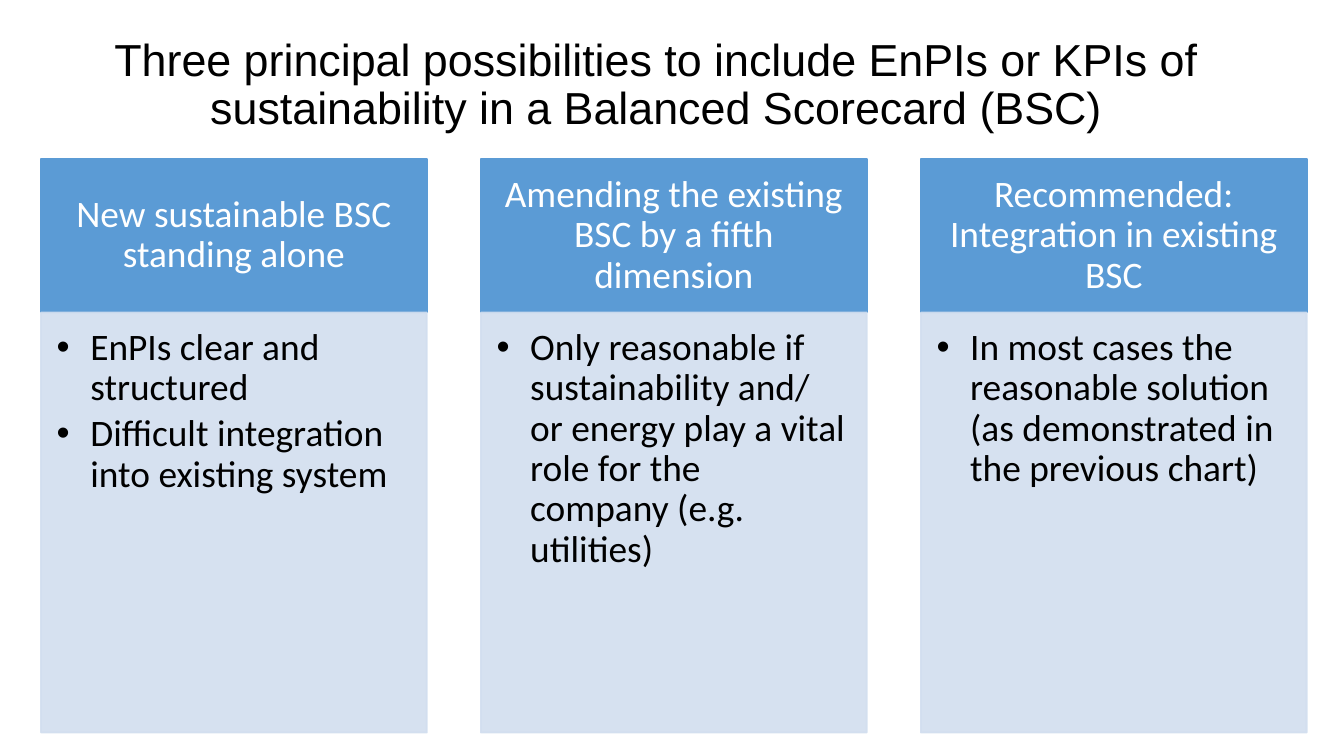
from lxml.etree import SubElement
from pptx import Presentation
from pptx.dml.color import RGBColor
from pptx.enum.shapes import MSO_SHAPE
from pptx.enum.text import MSO_ANCHOR, MSO_AUTO_SIZE, PP_ALIGN
from pptx.oxml.ns import qn
from pptx.util import Pt

BLACK = RGBColor(0x00, 0x00, 0x00)
WHITE = RGBColor(0xFF, 0xFF, 0xFF)
BLUE = RGBColor(0x5B, 0x9B, 0xD5)
PALE_BLUE = RGBColor(0xD2, 0xDE, 0xEF)

TITLE = ("Three principal possibilities to include EnPIs or KPIs of "
         "sustainability in a Balanced Scorecard (BSC)")
OPTIONS = [
    ("New sustainable BSC standing alone",
     ["EnPIs clear and structured",
      "Difficult integration into existing system"]),
    ("Amending the existing BSC by a fifth dimension",
     ["Only reasonable if sustainability and/ or energy play a vital role "
      "for the company (e.g. utilities)"]),
    ("Recommended: Integration in existing BSC",
     ["In most cases the reasonable solution (as demonstrated in the "
      "previous chart)"]),
]

TITLE_FONT = {"name": "Arial", "size": Pt(24)}
COLUMN_FONT = {"name": "Calibri", "size": Pt(20)}
TITLE_FRAME = {"word_wrap": True, "auto_size": MSO_AUTO_SIZE.NONE,
               "vertical_anchor": MSO_ANCHOR.MIDDLE}
HEADING_FRAME = {"word_wrap": True, "vertical_anchor": MSO_ANCHOR.MIDDLE,
                 "margin_left": Pt(11.2), "margin_right": Pt(11.2),
                 "margin_top": Pt(6.4), "margin_bottom": Pt(6.4)}
POINTS_FRAME = {"word_wrap": True, "vertical_anchor": MSO_ANCHOR.TOP,
                "margin_left": Pt(8.4), "margin_right": Pt(11.2),
                "margin_top": Pt(8.4), "margin_bottom": Pt(12.6)}
CENTRED = {"alignment": PP_ALIGN.CENTER, "line_spacing": 0.9}
LISTED = {"alignment": PP_ALIGN.LEFT, "line_spacing": 0.9,
          "space_before": Pt(0), "space_after": Pt(3)}


def apply_format(target, values):
    for attribute, value in values.items():
        setattr(target, attribute, value)


def write(frame, lines, frame_format, paragraph_format, font_format, color):
    apply_format(frame, frame_format)
    frame.text = "\n".join(lines)
    for paragraph in frame.paragraphs:
        apply_format(paragraph, paragraph_format)
        for run in paragraph.runs:
            apply_format(run.font, font_format)
            run.font.color.rgb = color


def add_bullet(paragraph, indent):
    properties = paragraph._p.get_or_add_pPr()
    properties.set("marL", str(indent))
    properties.set("indent", str(-indent))
    SubElement(properties, qn("a:buFont"), typeface="Arial")
    SubElement(properties, qn("a:buChar"), char="•")


def add_panel(slide, box, color, opacity=100):
    panel = slide.shapes.add_shape(MSO_SHAPE.RECTANGLE, *map(Pt, box))
    panel.shadow.inherit = False
    panel.line.width = Pt(1)
    panel.fill.solid()
    panel.line.fill.solid()
    for paint in (panel.fill, panel.line.fill):
        paint.fore_color.rgb = color
    if opacity < 100:
        for swatch in panel._element.spPr.iter(qn("a:srgbClr")):
            SubElement(swatch, qn("a:alpha"), val=str(opacity * 1000))
    return panel


def place_title(slide, box):
    title = slide.shapes.title
    title.left, title.top, title.width, title.height = map(Pt, box)
    write(title.text_frame, [TITLE], TITLE_FRAME, CENTRED, TITLE_FONT, BLACK)


def place_option(slide, box, heading, points):
    left, top, width, height = box
    heading_height = 82.5

    # Heading band
    band = add_panel(slide, (left, top, width, heading_height), BLUE)
    write(band.text_frame, [heading], HEADING_FRAME, CENTRED, COLUMN_FONT,
          WHITE)

    # Bulleted points
    body_box = (left, top + heading_height, width, height - heading_height)
    body = add_panel(slide, body_box, PALE_BLUE, opacity=90)
    write(body.text_frame, points, POINTS_FRAME, LISTED, COLUMN_FONT, BLACK)
    for paragraph in body.text_frame.paragraphs:
        add_bullet(paragraph, Pt(18))


def place_options(slide, box, gap):
    left, top, width, height = box
    column_width = (width - gap * (len(OPTIONS) - 1)) / len(OPTIONS)
    for index, (heading, points) in enumerate(OPTIONS):
        column_left = left + index * (column_width + gap)
        place_option(slide, (column_left, top, column_width, height),
                     heading, points)


def main():
    deck = Presentation()
    deck.slide_width, deck.slide_height = Pt(720), Pt(405)
    slide = deck.slides.add_slide(deck.slide_layouts[5])
    place_title(slide, (14.4, 8, 674, 76))
    place_options(slide, (22, 85, 678, 307.5), gap=29)
    deck.save("out.pptx")


if __name__ == "__main__":
    main()
